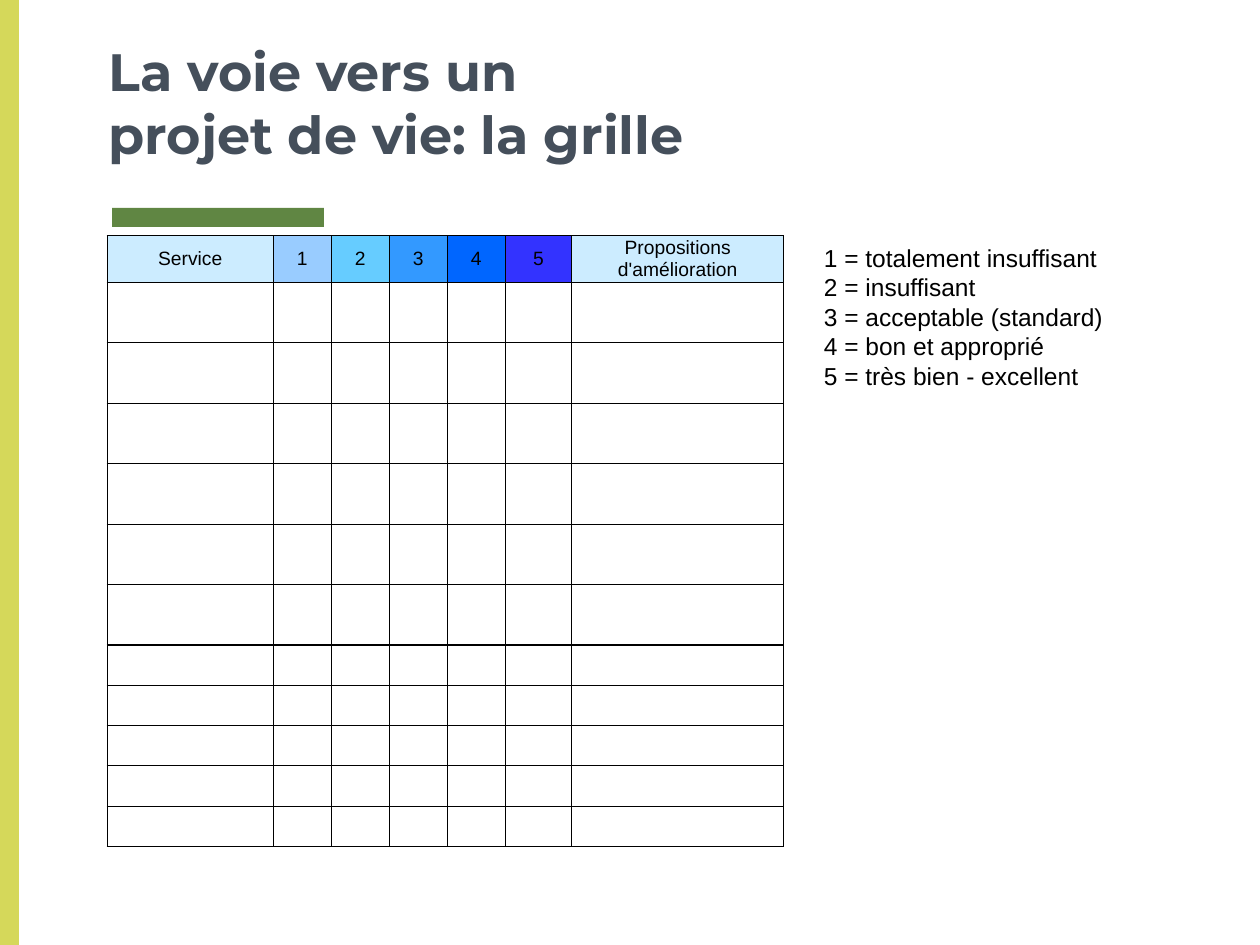
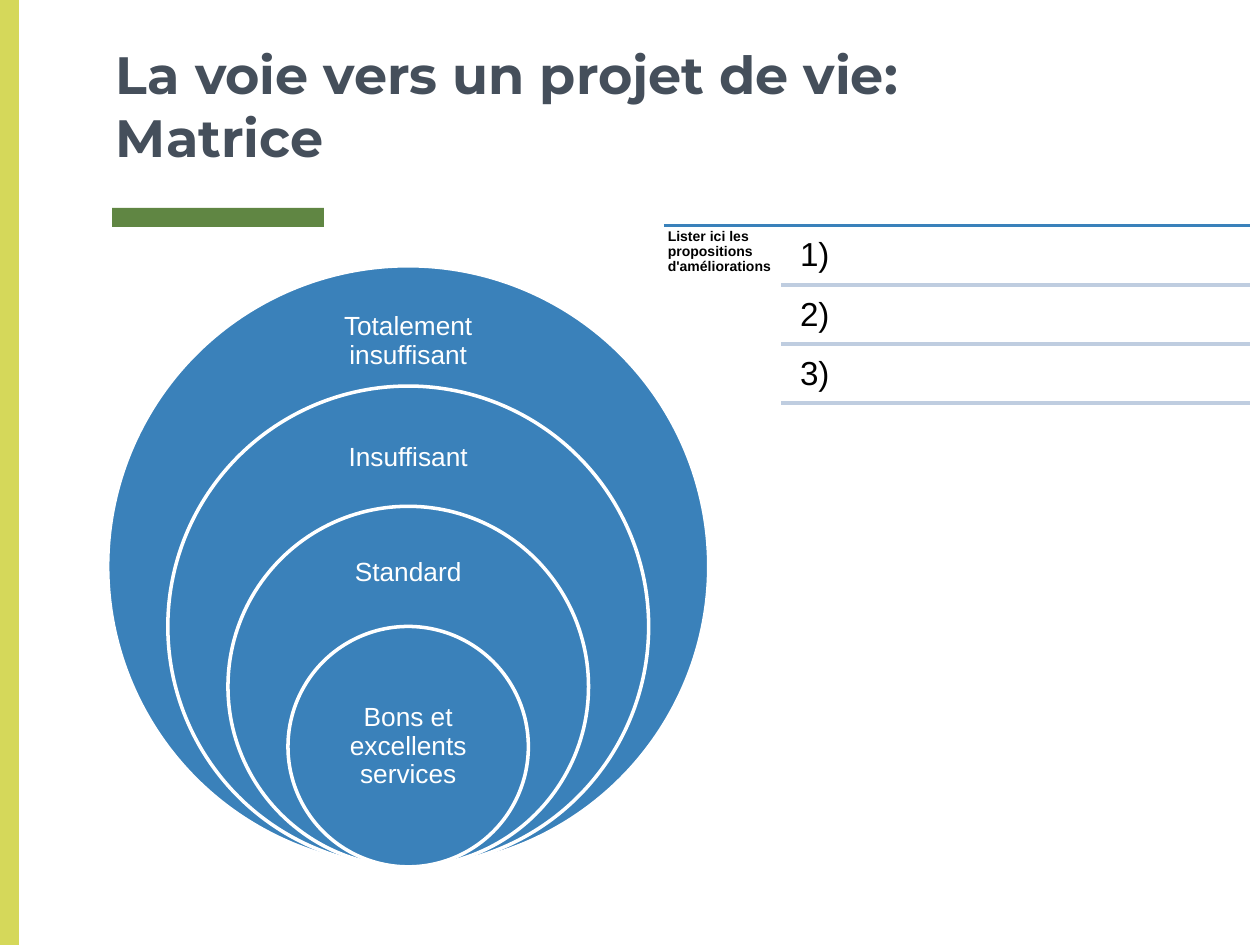
from dataclasses import dataclass
from typing import Any

from lxml import etree
from pptx import Presentation
from pptx import util as u
from pptx.dml.color import RGBColor
from pptx.enum import shapes, text
from pptx.oxml.ns import qn

Inches = u.Inches


@dataclass(frozen=True)
class TextStyle:
    size: float
    color: str = "000000"
    font: str = "Arial"
    bold: bool = False
    align: Any = text.PP_ALIGN.LEFT
    anchor: Any = text.MSO_ANCHOR.TOP
    line_spacing: float = 1.0


@dataclass(frozen=True)
class Theme:
    side_band: str = "D5D85A"
    accent_bar: str = "608643"
    circle: str = "3A81BA"
    rule: str = "BFCDE0"
    white: str = "FFFFFF"
    border: str = "000000"
    header_pale: str = "CCECFF"
    scores: tuple[str, ...] = ("99CCFF", "66CCFF", "3399FF", "0066FF", "3333FF")
    line_width: float = 2
    border_width: float = 0.75
    title: TextStyle = TextStyle(30, "454F5B", "Montserrat", True, anchor=text.MSO_ANCHOR.BOTTOM)
    cell: TextStyle = TextStyle(11, align=text.PP_ALIGN.CENTER, anchor=text.MSO_ANCHOR.MIDDLE)
    legend: TextStyle = TextStyle(14)
    ring: TextStyle = TextStyle(15, "FFFFFF", align=text.PP_ALIGN.CENTER,
                                anchor=text.MSO_ANCHOR.MIDDLE, line_spacing=0.9)
    prompt: TextStyle = TextStyle(8, bold=True, line_spacing=0.9)
    entry: TextStyle = TextStyle(19, line_spacing=0.9)


THEME = Theme()


@dataclass(frozen=True)
class Area:
    left: float
    top: float
    width: float
    height: float

    def lengths(self) -> tuple[int, ...]:
        return tuple(Inches(n) for n in (self.left, self.top, self.width, self.height))


@dataclass(frozen=True)
class Ring:
    label: str
    label_top: float
    label_height: float


RINGS = (
    Ring("Totalement insuffisant", 2.35, 0.72),
    Ring("Insuffisant", 3.29, 0.69),
    Ring("Standard", 4.23, 0.64),
    Ring("Bons et excellents services", 5.45, 0.95),
)
LEGEND = (
    "1 = totalement insuffisant",
    "2 = insuffisant",
    "3 = acceptable (standard)",
    "4 = bon et approprié",
    "5 = très bien - excellent",
)
GRID_COLUMNS = (1.32, 0.46, 0.46, 0.46, 0.46, 0.53, 1.68)
GRID_ROWS = (0.37,) + (0.48,) * 6 + (0.32,) * 5


def style_paragraphs(frame, style: TextStyle) -> None:
    for para in frame.paragraphs:
        para.alignment = style.align
        para.line_spacing = style.line_spacing
        para.font.size = u.Pt(style.size)
        para.font.name = style.font
        para.font.bold = style.bold
        para.font.color.rgb = RGBColor.from_string(style.color)


def write_text(frame, words: str, style: TextStyle, inset: float) -> None:
    frame.word_wrap = True
    frame.auto_size = text.MSO_AUTO_SIZE.NONE
    frame.vertical_anchor = style.anchor
    frame.margin_left = frame.margin_right = Inches(inset)
    frame.margin_top = frame.margin_bottom = Inches(inset)
    frame.text = words
    style_paragraphs(frame, style)


def add_text(tree, area: Area, words: str, style: TextStyle, inset: float):
    box = tree.add_textbox(*area.lengths())
    write_text(box.text_frame, words, style, inset)
    return box


def add_filled(tree, kind, area: Area, color: str, outline: str | None = None):
    shape = tree.add_shape(kind, *area.lengths())
    shape.shadow.inherit = False
    shape.fill.solid()
    shape.fill.fore_color.rgb = RGBColor.from_string(color)
    if outline:
        shape.line.color.rgb = RGBColor.from_string(outline)
        shape.line.width = u.Pt(THEME.line_width)
    else:
        shape.line.fill.background()
    return shape


def add_rule(tree, left: float, right: float, top: float, color: str) -> None:
    rule = tree.add_connector(shapes.MSO_CONNECTOR.STRAIGHT, Inches(left), Inches(top),
                              Inches(right), Inches(top))
    rule.line.color.rgb = RGBColor.from_string(color)
    rule.line.width = u.Pt(THEME.line_width)
    etree.SubElement(rule.element.spPr, qn("a:effectLst"))


def add_page(deck, title: str, area: Area):
    page = deck.slides.add_slide(deck.slide_layouts[5])
    holder = page.shapes.title
    holder.left, holder.top, holder.width, holder.height = area.lengths()
    write_text(holder.text_frame, title, THEME.title, 0.1)
    return page


def share_bands(page) -> None:
    """Place the bands on the layout, so that every page shows them."""
    bands = ((Area(0.89, 1.65, 1.68, 0.15), THEME.accent_bar),
             (Area(0, 0, 0.15, 7.5), THEME.side_band))
    for number, (area, color) in enumerate(bands, start=20):
        band = add_filled(page.shapes, shapes.MSO_SHAPE.RECTANGLE, area, color)
        band.element.nvSpPr.cNvPr.id = number
        page.slide_layout.shapes.element.append(band.element)


def format_cell(cell, color: str) -> None:
    cell.margin_left = cell.margin_right = Inches(0.06)
    cell.margin_top = cell.margin_bottom = 0
    cell.vertical_anchor = THEME.cell.anchor
    properties = cell._tc.get_or_add_tcPr()
    for side in ("a:lnL", "a:lnR", "a:lnT", "a:lnB"):
        border = etree.SubElement(properties, qn(side), w=str(u.Pt(THEME.border_width)))
        fill = etree.SubElement(border, qn("a:solidFill"))
        etree.SubElement(fill, qn("a:srgbClr"), val=THEME.border)
    cell.fill.solid()
    cell.fill.fore_color.rgb = RGBColor.from_string(color)
    style_paragraphs(cell.text_frame, THEME.cell)


def add_grid(page) -> None:
    area = Area(0.85, 1.87, sum(GRID_COLUMNS), sum(GRID_ROWS))
    table = page.shapes.add_table(len(GRID_ROWS), len(GRID_COLUMNS), *area.lengths()).table
    table.first_row = table.horz_banding = False
    for column, width in zip(table.columns, GRID_COLUMNS):
        column.width = Inches(width)
    for row, height in zip(table.rows, GRID_ROWS):
        row.height = Inches(height)

    headings = ("Service", "1", "2", "3", "4", "5", "Propositions d'amélioration")
    for cell, heading in zip(table.rows[0].cells, headings):
        cell.text = heading
    header_colors = (THEME.header_pale, *THEME.scores, THEME.header_pale)
    for index, row in enumerate(table.rows):
        for cell, color in zip(row.cells, header_colors):
            format_cell(cell, THEME.white if index else color)


def add_rings(page) -> None:
    """Nest the circles so that they all touch at the bottom."""
    center, bottom, largest, label_width = 3.24, 6.88, 4.77, 1.33
    tree = page.shapes.add_group_shape().shapes
    for index, ring in enumerate(RINGS):
        size = largest * (1 - index / 5)
        add_filled(tree, shapes.MSO_SHAPE.OVAL,
                   Area(center - size / 2, bottom - size, size, size),
                   THEME.circle, THEME.white)
        add_text(tree, Area(center - label_width / 2, ring.label_top, label_width, ring.label_height),
                 ring.label, THEME.ring, 0.12)


def add_proposals(page) -> None:
    left, entry_left, right, top, step = 5.27, 6.2, 9.92, 1.79, 0.47
    tree = page.shapes.add_group_shape().shapes
    add_rule(tree, left, right, top, THEME.circle)
    add_text(tree, Area(left, top, 0.93, 1.43), "Lister ici les propositions d'améliorations",
             THEME.prompt, 0.03)
    for index in range(3):
        entry_top = top + 0.02 + index * step
        add_text(tree, Area(entry_left + 0.07, entry_top, 3.66, 0.45), f"{index + 1})",
                 THEME.entry, 0.08)
        add_rule(tree, entry_left, right, entry_top + 0.45, THEME.rule)


def main() -> None:
    deck = Presentation()
    deck.slide_width, deck.slide_height = Inches(10), Inches(7.5)

    grid_page = add_page(deck, "La voie vers un\vprojet de vie: la grille", Area(0.76, 0, 8.49, 1.41))
    share_bands(grid_page)
    add_grid(grid_page)
    legend = add_text(grid_page.shapes, Area(6.44, 1.88, 2.71, 1.28), "\n".join(LEGEND),
                      THEME.legend, 0.1)
    legend.text_frame.margin_top = legend.text_frame.margin_bottom = Inches(0.05)
    legend.text_frame.auto_size = text.MSO_AUTO_SIZE.SHAPE_TO_FIT_TEXT

    matrix_page = add_page(deck, "La voie vers un projet de vie:\nMatrice", Area(0.82, 0.02, 8.49, 1.41))
    add_rings(matrix_page)
    add_proposals(matrix_page)

    deck.save("out.pptx")


if __name__ == "__main__":
    main()
